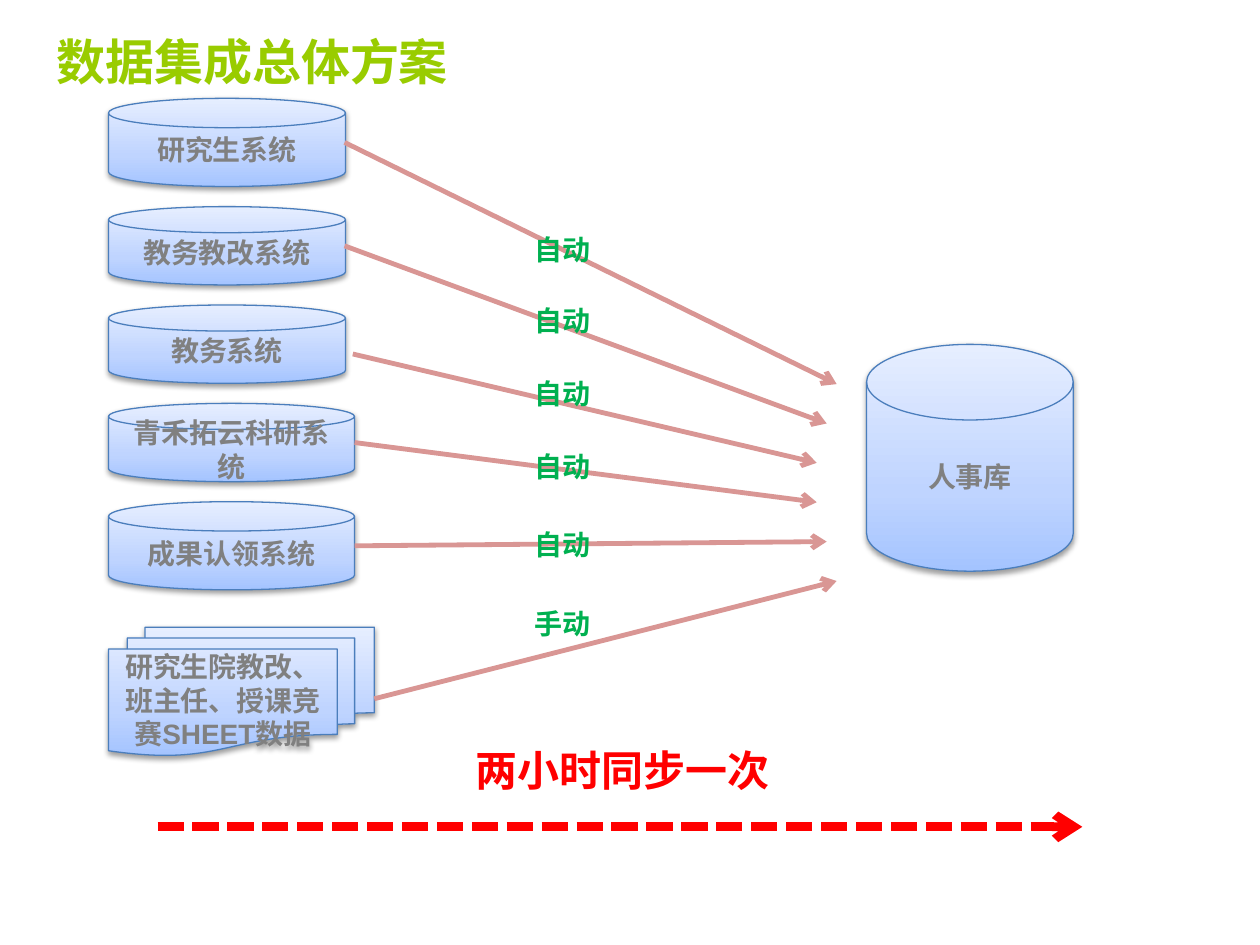
from lxml.etree import SubElement
from pptx import Presentation
from pptx.dml.color import RGBColor
from pptx.enum.dml import MSO_LINE
from pptx.enum.shapes import MSO_CONNECTOR, MSO_SHAPE
from pptx.enum.text import MSO_ANCHOR, PP_ALIGN
from pptx.oxml import parse_xml
from pptx.oxml.ns import nsdecls, qn
from pptx.util import Pt

LIME = RGBColor(0x99, 0xCC, 0x00)
GRAY = RGBColor(0x80, 0x80, 0x80)
GREEN = RGBColor(0x00, 0xB0, 0x50)
RED = RGBColor(0xFF, 0x00, 0x00)
ROSE = RGBColor(0xD9, 0x96, 0x94)
OUTLINE = RGBColor(0x4B, 0x7E, 0xBC)
GRADIENT = [(0, RGBColor(0xA4, 0xC4, 0xFF)),
            (35, RGBColor(0xBF, 0xD4, 0xFF)),
            (100, RGBColor(0xE6, 0xEE, 0xFF))]
CJK = "Noto Sans CJK SC"
DISK = MSO_SHAPE.FLOWCHART_MAGNETIC_DISK
DOCUMENTS = MSO_SHAPE.FLOWCHART_MULTIDOCUMENT

deck = Presentation()
deck.slide_width, deck.slide_height = Pt(720), Pt(540)
page = deck.slides.add_slide(deck.slide_layouts[6])


def write(box, text, size, color, font=CJK):
    """Put one bold paragraph in a box, with the CJK face for Chinese."""
    box.text_frame.word_wrap = True
    paragraph = box.text_frame.paragraphs[0]
    paragraph.text = text
    paragraph.font.size = Pt(size)
    paragraph.font.bold = True
    paragraph.font.color.rgb = color
    paragraph.font.name = font
    east_asian = parse_xml(f'<a:ea {nsdecls("a")} typeface="{CJK}"/>')
    paragraph.font._element.find(qn("a:latin")).addnext(east_asian)
    return paragraph


def add_arrow(x1, y1, x2, y2, color, width):
    arrow = page.shapes.add_connector(
        MSO_CONNECTOR.STRAIGHT, Pt(x1), Pt(y1), Pt(x2), Pt(y2))
    arrow.line.color.rgb = color
    arrow.line.width = Pt(width)
    SubElement(arrow.line._get_or_add_ln(), qn("a:tailEnd"), type="arrow")
    SubElement(arrow._element.spPr, qn("a:effectLst"))
    return arrow


title = page.shapes.add_textbox(Pt(25.2), Pt(15.1), Pt(648), Pt(38.9))
title.text_frame.vertical_anchor = MSO_ANCHOR.MIDDLE
write(title, "数据集成总体方案", 28, LIME)

# Data stores: text, preset, left, top, width, height, Latin font
SOURCE_LEFT = 62
sources = [
    ("研究生系统", DISK, SOURCE_LEFT, 56.2, 135.4, 50.4, "Calibri"),
    ("教务教改系统", DISK, SOURCE_LEFT, 118.1, 135.4, 44.8, "Calibri"),
    ("教务系统", DISK, SOURCE_LEFT, 174.3, 135.4, 44.8, "Calibri"),
    ("青禾拓云科研系统", DISK, SOURCE_LEFT, 230.5, 140.6, 44.8, "Arial"),
    ("成果认领系统", DISK, SOURCE_LEFT, 286.7, 140.6, 50.4, "Arial"),
    ("研究生院教改、班主任、授课竞赛SHEET数据", DOCUMENTS,
     SOURCE_LEFT, 358.4, 151.9, 73.4, "Arial"),
]
target = ("人事库", DISK, 495.2, 196.8, 118.1, 129.6, "Calibri")

for text, preset, left, top, width, height, font in sources + [target]:
    store = page.shapes.add_shape(preset, Pt(left), Pt(top), Pt(width), Pt(height))
    store.fill.gradient()
    store.fill.gradient_angle = 90
    stops = store._element.spPr.find(".//" + qn("a:gsLst"))
    stops.clear()
    for position, color in GRADIENT:
        stop = SubElement(stops, qn("a:gs"), pos=str(position * 1000))
        SubElement(stop, qn("a:srgbClr"), val=str(color))
    store.line.color.rgb = OUTLINE
    store.line.width = Pt(0.75)
    store.shadow.inherit = False
    store._element.spPr.find(qn("a:effectLst")).append(parse_xml(
        f'<a:outerShdw {nsdecls("a")} blurRad="40000" dist="20000" dir="5400000" '
        'rotWithShape="0"><a:srgbClr val="000000"><a:alpha val="38000"/>'
        '</a:srgbClr></a:outerShdw>'))
    store.text_frame.vertical_anchor = MSO_ANCHOR.MIDDLE
    write(store, text, 16, GRAY, font).alignment = PP_ALIGN.CENTER

# One arrow per source, fanning in on the target at equal vertical steps
arrow_starts = [(196.9, 81.4), (196.9, 140.5), (201.6, 202.3),
                (202.6, 252.9), (202.6, 311.9), (213.9, 399.3)]
arrow_tips = [478.1, 472.4, 466.7, 466.7, 472.4, 478.1]
for row, ((x, y), tip) in enumerate(zip(arrow_starts, arrow_tips)):
    add_arrow(x, y, tip, 219.5 + 22.5 * row, ROSE, 2.75)

label_tops = [129.6, 170.2, 211.7, 253.4, 298.1, 343]
for row, top in enumerate(label_tops):
    manual = row == len(label_tops) - 1
    label = page.shapes.add_textbox(
        Pt(298.5), Pt(top), Pt(110.9 if manual else 61.9), Pt(26.6))
    write(label, "手动" if manual else "自动", 16, GREEN)

add_arrow(90, 472.5, 618.5, 472.5, RED, 5).line.dash_style = MSO_LINE.SQUARE_DOT
caption = page.shapes.add_textbox(Pt(264.4), Pt(422), Pt(247.7), Pt(36.7))
write(caption, "两小时同步一次", 24, RED, "Arial")

deck.save("out.pptx")
